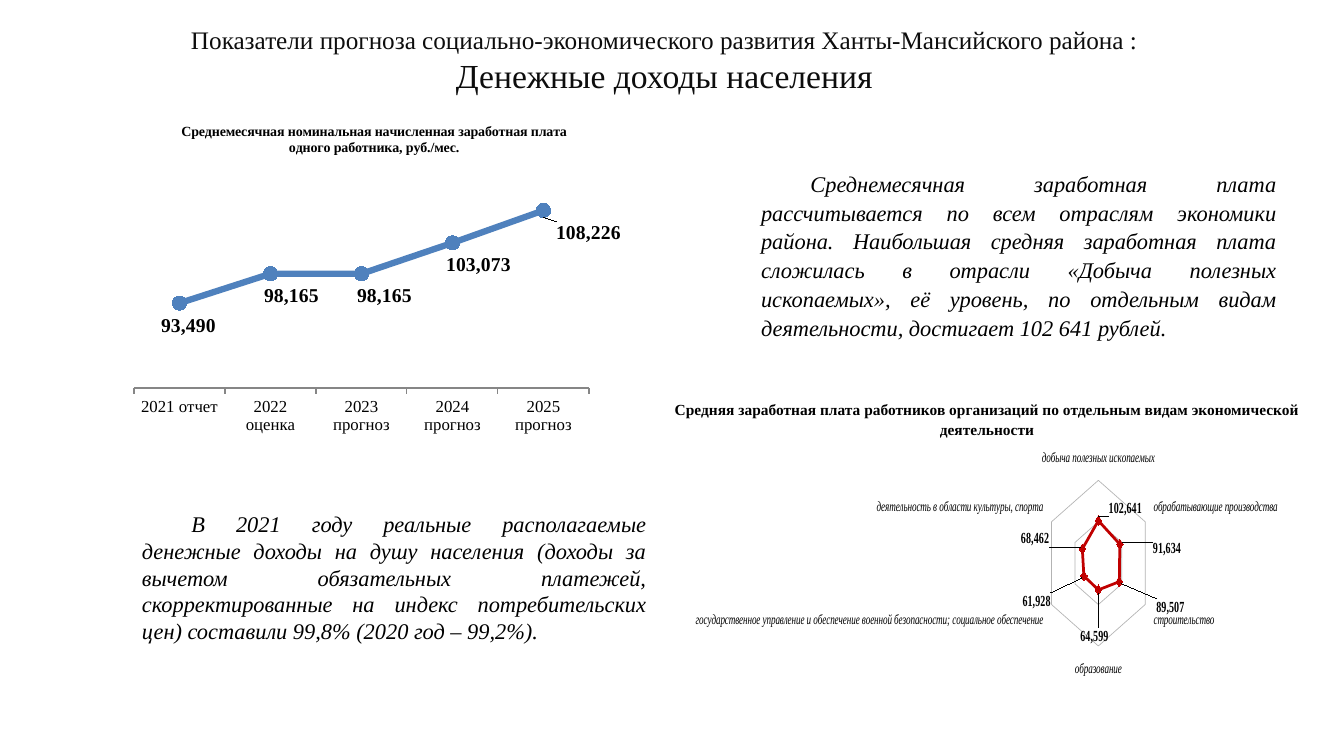
import pptx
import pptx.chart.data
import pptx.dml.color
import pptx.enum.chart
import pptx.enum.text
import pptx.oxml
import pptx.oxml.ns
import pptx.util

COLORS = {"title": "0D0D0D", "text": "000000", "wage": "4F81BD",
          "sector": "C00000", "axis": "868686", "grid": "B3B3B3"}
SERIF = "Times New Roman"
THOUSANDS = "#,##0"
ALIGN = pptx.enum.text.PP_ALIGN
CHART = pptx.enum.chart.XL_CHART_TYPE
MARKER = pptx.enum.chart.XL_MARKER_STYLE
BELOW = pptx.enum.chart.XL_LABEL_POSITION.BELOW

# Each point: category, value, label shift as shares of the chart
WAGES = [("2021 отчет", 93490, (0.018, 0)),
         ("2022 оценка", 98165, (0.042, 0)),
         ("2023 прогноз", 98165, (0.046, 0)),
         ("2024 прогноз", 103073, (0.052, 0)),
         ("2025 прогноз", 108226, (0.09, 0))]
SECTORS = [("добыча полезных ископаемых", 102641, (0.07, 0.01)),
           ("обрабатывающие производства", 91634, (0.08, 0.04)),
           ("строительство", 89507, (0.09, 0.04)),
           ("образование", 64599, (-0.01, 0.08)),
           ("государственное управление и обеспечение военной безопасности; "
            "социальное обеспечение", 61928, (-0.08, 0.04)),
           ("деятельность в области культуры, спорта", 68462, (-0.08, 0))]


def rgb(name):
    return pptx.dml.color.RGBColor.from_string(COLORS[name])


def set_font(font, size, color="text", bold=False, italic=False):
    font.name, font.size = SERIF, pptx.util.Pt(size)
    font.bold, font.italic = bold, italic
    font.color.rgb = rgb(color)


def inches(box):
    return [pptx.util.Inches(length) for length in box]


def add_text(page, box, text, size, align, spacing=1.0, indent=0, **style):
    """A wrapped text box with one paragraph."""
    frame = page.shapes.add_textbox(*inches(box)).text_frame
    frame.word_wrap = True
    para = frame.paragraphs[0]
    para.text = text
    para.alignment, para.line_spacing = align, spacing
    set_font(para.font, size, **style)
    if indent:
        para._p.get_or_add_pPr().set("indent", str(pptx.util.Inches(indent)))
    return frame


def manual_layout(**parts):
    """A c:layout element made of the given settings."""
    settings = "".join(f'<c:{key} val="{value}"/>' for key, value in parts.items())
    return pptx.oxml.parse_xml(
        f'<c:layout {pptx.oxml.ns.nsdecls("c")}><c:manualLayout>{settings}'
        "</c:manualLayout></c:layout>")


def set_plot_area(chart, left, top, width, height):
    area = chart._chartSpace.chart.plotArea
    for old in area.findall(pptx.oxml.ns.qn("c:layout")):
        area.remove(old)
    area.insert(0, manual_layout(layoutTarget="inner", xMode="edge", yMode="edge",
                                 x=left, y=top, w=width, h=height))


def add_value_chart(page, box, kind, name, points, color, line, marker,
                    marker_size, label_size, position=None):
    """A one-series chart with a shifted label at each point."""
    data = pptx.chart.data.CategoryChartData(number_format=THOUSANDS)
    data.categories = [category for category, _, _ in points]
    data.add_series(name, [value for _, value, _ in points])
    chart = page.shapes.add_chart(kind, *inches(box), data).chart
    chart.has_legend = chart.has_title = False
    set_font(chart.font, 10)
    plot = chart.plots[0]
    plot.vary_by_categories = False

    # Line and markers
    series = plot.series[0]
    series.smooth = False
    series.format.line.width = pptx.util.Pt(line)
    series.format.line.color.rgb = rgb(color)
    series.marker.style, series.marker.size = marker, marker_size
    series.marker.format.fill.solid()
    series.marker.format.fill.fore_color.rgb = rgb(color)
    series.marker.format.line.color.rgb = rgb(color)

    # Labels
    labels = series.data_labels
    labels.show_value = True
    labels.number_format, labels.number_format_is_linked = THOUSANDS, False
    set_font(labels.font, label_size, bold=True)
    for index in range(len(points)):
        label = series.points[index].data_label
        set_font(label.font, label_size, bold=True)
        if position is not None:
            label.position = position
    shifts = [shift for _, _, shift in points]
    for label, (across, down) in zip(
            series._element.iter(pptx.oxml.ns.qn("c:dLbl")), shifts):
        label.insert(1, manual_layout(x=across, y=down))

    chart.value_axis.visible = False
    return chart


def add_wage_chart(page, box):
    chart = add_value_chart(page, box, CHART.LINE_MARKERS, "Заработная плата", WAGES,
                            "wage", 4.5, MARKER.CIRCLE, 10, 14, BELOW)
    set_plot_area(chart, 0.02, 0.18, 0.91, 0.66)
    title = chart.chart_title
    title.text_frame.text = ("Среднемесячная номинальная начисленная заработная плата "
                             "одного работника, руб./мес.")
    set_font(title.text_frame.paragraphs[0].font, 10, bold=True)
    title._element.get_or_add_tx().addnext(
        manual_layout(xMode="edge", yMode="edge", x=0.1, y=0.04))
    values = chart.value_axis
    values.minimum_scale, values.maximum_scale = 80000, 115000
    values.major_unit = 10000
    values.has_major_gridlines = False
    years = chart.category_axis
    set_font(years.tick_labels.font, 12)
    years.format.line.color.rgb = rgb("axis")


def add_sector_chart(page, box):
    chart = add_value_chart(page, box, CHART.RADAR_MARKERS, "Виды деятельности",
                            SECTORS, "sector", 3, MARKER.DIAMOND, 7, 11)
    set_plot_area(chart, 0.37, 0.24, 0.28, 0.6)
    values = chart.value_axis
    values.minimum_scale, values.maximum_scale = 0, 200000
    values.major_unit = 100000
    rings = values.major_gridlines.format.line
    rings.color.rgb, rings.width = rgb("grid"), pptx.util.Pt(0.75)
    set_font(chart.category_axis.tick_labels.font, 10, italic=True)


def add_title(page, box):
    frame = add_text(page, box, "Показатели прогноза социально-экономического развития "
                     "Ханты-Мансийского района :\vДенежные доходы населения",
                     18, ALIGN.CENTER, color="title")
    frame.vertical_anchor = pptx.enum.text.MSO_ANCHOR.MIDDLE
    frame.paragraphs[0].runs[-1].font.size = pptx.util.Pt(24)


def build_income_slide(page):
    add_title(page, (1.71, 0.29, 9.76, 0.6))

    # Left column: wage trend and real income
    add_wage_chart(page, (1.23, 1.07, 4.96, 3.31))
    add_text(page, (1.31, 5.01, 5.2, 1.45),
             "В 2021 году реальные располагаемые денежные доходы на душу населения "
             "(доходы за вычетом обязательных платежей, скорректированные на индекс "
             "потребительских цен) составили 99,8% (2020 год – 99,2%).",
             16, ALIGN.JUSTIFY, indent=0.49, italic=True)

    # Right column: wages by sector
    add_text(page, (7.45, 1.62, 5.31, 1.83),
             "Среднемесячная заработная плата рассчитывается по всем отраслям экономики "
             "района. Наибольшая средняя заработная плата сложилась в отрасли «Добыча "
             "полезных ископаемых», её уровень, по отдельным видам деятельности, "
             "достигает 102 641 рублей.",
             16, ALIGN.JUSTIFY, spacing=1.07, indent=0.49, italic=True)
    add_sector_chart(page, (6.9, 3.59, 5.87, 3.7))
    add_text(page, (6.51, 3.91, 6.56, 0.5),
             "Средняя заработная плата работников организаций по отдельным видам "
             "экономической деятельности", 11, ALIGN.CENTER, spacing=1.07, bold=True)


def main():
    deck = pptx.Presentation()
    deck.slide_width, deck.slide_height = inches((13.33, 7.5))
    build_income_slide(deck.slides.add_slide(deck.slide_layouts[6]))
    deck.save("out.pptx")


if __name__ == "__main__":
    main()
